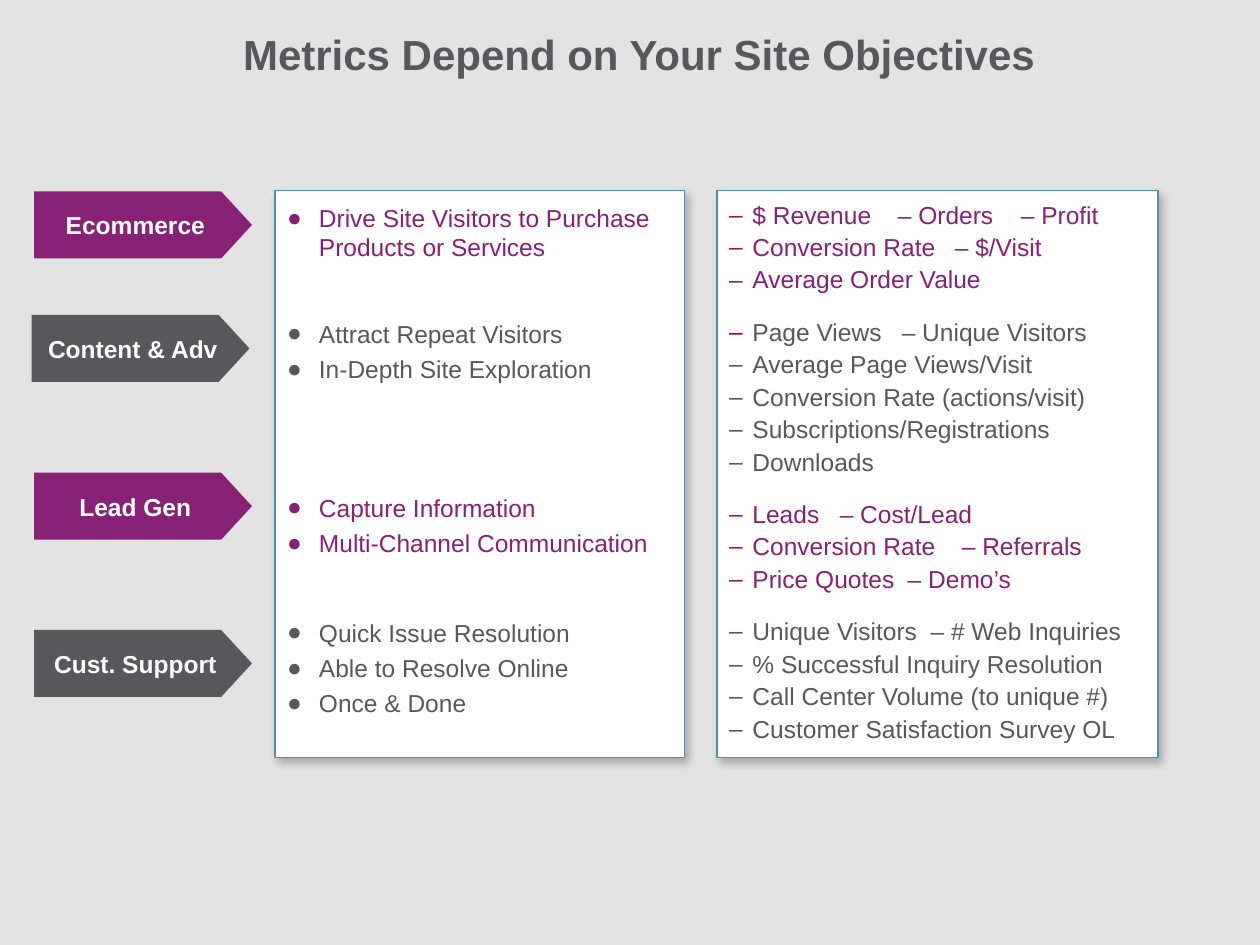
from dataclasses import dataclass

from lxml.etree import SubElement
from pptx import Presentation
from pptx.dml.color import RGBColor
from pptx.enum.shapes import MSO_SHAPE
from pptx.enum.text import MSO_ANCHOR, PP_ALIGN
from pptx.oxml.ns import qn
from pptx.util import Cm, Pt


@dataclass(frozen=True)
class Theme:
    font: str = "Arial"
    background: str = "E3E3E3"
    purple: str = "862175"
    grey: str = "58585A"
    white: str = "FFFFFF"
    border: str = "508EB5"
    accent_dash: str = "800080"
    shadow: str = "000000"
    title_size: int = 24
    body_size: int = 14


@dataclass(frozen=True)
class ListStyle:
    bullet: str
    indent: float
    line_spacing: float
    space_before: float


def set_values(target, values):
    for name, value in values.items():
        setattr(target, name, value)


class SlideBuilder:
    def __init__(self, page, theme):
        self.page = page
        self.theme = theme
        self.fill(page.background, theme.background)

    def fill(self, target, color):
        target.fill.solid()
        target.fill.fore_color.rgb = RGBColor.from_string(color)

    def add_span(self, para, text, color, size, bold=False):
        span = para.add_run()
        span.text = text
        set_values(span.font, {"name": self.theme.font, "size": Pt(size), "bold": bold})
        span.font.color.rgb = RGBColor.from_string(color)

    def shape(self, kind, left, top, width, height, color):
        box = self.page.shapes.add_shape(kind, Cm(left), Cm(top), Cm(width), Cm(height))
        box.shadow.inherit = False
        self.fill(box, color)
        return box

    def title(self, text, left, top, width, height):
        box = self.page.shapes.add_textbox(Cm(left), Cm(top), Cm(width), Cm(height))
        set_values(box.text_frame, {
            "word_wrap": True, "vertical_anchor": MSO_ANCHOR.MIDDLE,
            "margin_top": 0, "margin_bottom": 0,
        })
        para = box.text_frame.paragraphs[0]
        para.line_spacing = 0.8
        self.add_span(para, text, self.theme.grey, self.theme.title_size, True)

    def label(self, text, left, top, color):
        box = self.shape(MSO_SHAPE.PENTAGON, left, top, 4.39, 1.35, color)
        box.adjustments[0] = 0.46
        box.line.fill.background()
        set_values(box.text_frame, {
            "word_wrap": False, "vertical_anchor": MSO_ANCHOR.MIDDLE,
        })
        para = box.text_frame.paragraphs[0]
        para.alignment = PP_ALIGN.CENTER
        self.add_span(para, text, self.theme.white, self.theme.body_size, True)

    def panel(self, left, top, width, height, style, groups):
        box = self.shape(MSO_SHAPE.RECTANGLE, left, top, width, height, self.theme.white)
        box.line.color.rgb = RGBColor.from_string(self.theme.border)
        box.line.width = Pt(1)
        self.drop_shadow(box)
        frame = box.text_frame
        set_values(frame, {
            "word_wrap": True, "vertical_anchor": MSO_ANCHOR.TOP,
            "margin_top": Cm(0.25), "margin_bottom": Cm(0.13),
        })
        for number, (color, gap, dash_color, items) in enumerate(groups):
            for position, (text, *stops) in enumerate(items):
                first = number == position == 0
                para = frame.paragraphs[0] if first else frame.add_paragraph()
                space = style.space_before if position else gap
                set_values(para, {
                    "alignment": PP_ALIGN.LEFT, "line_spacing": style.line_spacing,
                    "space_before": Pt(space),
                })
                self.bullet(para, style, color if position else dash_color, stops)
                self.add_span(para, text, color, self.theme.body_size)

    def bullet(self, para, style, color, stops):
        properties = para._p.get_or_add_pPr()
        properties.set("marL", str(Cm(style.indent)))
        properties.set("indent", str(-Cm(style.indent)))
        SubElement(SubElement(properties, qn("a:buClr")), qn("a:srgbClr"), val=color)
        SubElement(properties, qn("a:buFont"), typeface=self.theme.font)
        SubElement(properties, qn("a:buChar"), char=style.bullet)
        if stops:
            tabs = SubElement(properties, qn("a:tabLst"))
            for stop in stops:
                SubElement(tabs, qn("a:tab"), pos=str(Cm(stop)), algn="l")

    def drop_shadow(self, box):
        effects = box._element.spPr.find(qn("a:effectLst"))
        outer = SubElement(effects, qn("a:outerShdw"), blurRad=str(Pt(5)),
                           dist=str(Pt(3)), dir=str(55 * 60000), algn="tl", rotWithShape="0")
        color = SubElement(outer, qn("a:srgbClr"), val=self.theme.shadow)
        SubElement(color, qn("a:alpha"), val="25000")


def main():
    theme = Theme()
    deck = Presentation()
    set_values(deck, {"slide_width": Cm(25.4), "slide_height": Cm(19.05)})
    builder = SlideBuilder(deck.slides.add_slide(deck.slide_layouts[6]), theme)
    purple, grey = theme.purple, theme.grey

    builder.title("Metrics Depend on Your Site Objectives", 4.65, 0, 20.75, 2.34)

    goals = [
        (purple, 0, purple, [("Drive Site Visitors to Purchase Products or Services",)]),
        (grey, 32.5, grey, [("Attract Repeat Visitors",), ("In-Depth Site Exploration",)]),
        (purple, 62.4, purple, [("Capture Information",), ("Multi-Channel Communication",)]),
        (grey, 34.5, grey, [
            ("Quick Issue Resolution",), ("Able to Resolve Online",), ("Once & Done",)]),
    ]
    builder.panel(5.54, 3.84, 8.26, 11.43, ListStyle("●", 0.64, 1.0, 3.4), goals)

    metrics = [
        (purple, 0, purple, [
            ("$ Revenue\t– Orders\t– Profit", 3.4, 5.88),
            ("Conversion Rate\t– $/Visit", 4.55),
            ("Average Order Value",)]),
        (grey, 14.8, theme.accent_dash, [
            ("Page Views\t– Unique Visitors", 3.48),
            ("Average Page Views/Visit",),
            ("Conversion Rate (actions/visit)",),
            ("Subscriptions/Registrations",),
            ("Downloads",)]),
        (purple, 14.8, purple, [
            ("Leads\t– Cost/Lead", 2.23),
            ("Conversion Rate\t– Referrals", 4.69),
            ("Price Quotes\t– Demo’s", 3.6)]),
        (grey, 14.8, grey, [
            ("Unique Visitors\t– # Web Inquiries", 4.06),
            ("% Successful Inquiry Resolution",),
            ("Call Center Volume (to unique #)",),
            ("Customer Satisfaction Survey OL",)]),
    ]
    builder.panel(14.45, 3.84, 8.89, 11.43, ListStyle("–", 0.47, 0.9, 3.4), metrics)

    labels = [
        ("Ecommerce", 0.69, 3.86, purple),
        ("Content & Adv", 0.64, 6.35, grey),
        ("Lead Gen", 0.69, 9.53, purple),
        ("Cust. Support", 0.69, 12.7, grey),
    ]
    for label in labels:
        builder.label(*label)

    deck.save("out.pptx")


if __name__ == "__main__":
    main()
